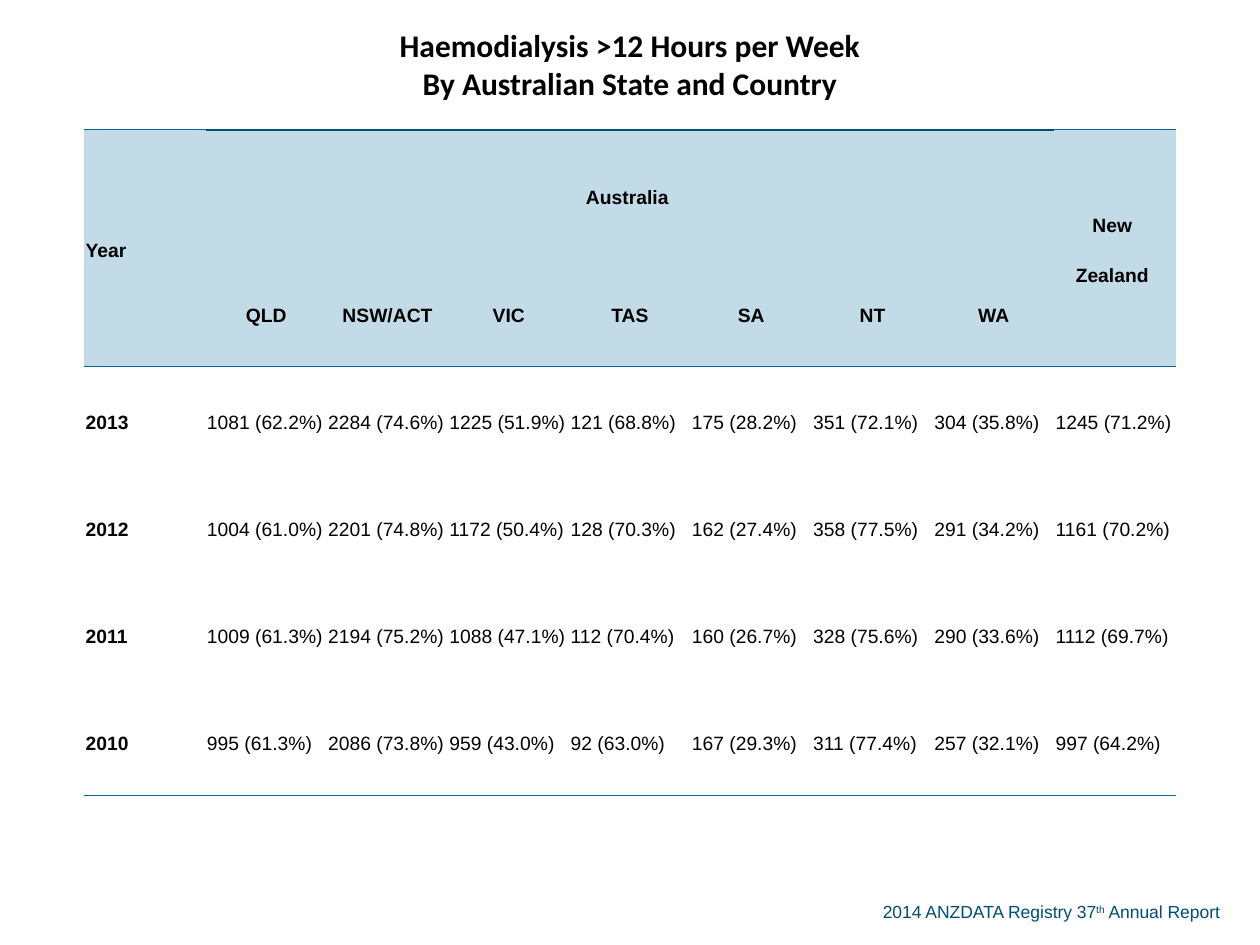
from lxml import etree
from pptx import Presentation
from pptx.dml.color import RGBColor
from pptx.enum.text import MSO_ANCHOR, MSO_AUTO_SIZE, PP_ALIGN
from pptx.oxml.ns import qn
from pptx.util import Inches, Pt

LEFT, CENTER, RIGHT = PP_ALIGN.LEFT, PP_ALIGN.CENTER, PP_ALIGN.RIGHT
MIDDLE = MSO_ANCHOR.MIDDLE
FIT_SHAPE = MSO_AUTO_SIZE.SHAPE_TO_FIT_TEXT
BLANK_LAYOUT = 6

COLORS = {"text": "000000", "header": "C2DBE7", "rule": "006699", "accent": "004D73"}

TITLE = ["Haemodialysis >12 Hours per Week", "By Australian State and Country"]
STATES = ["QLD", "NSW/ACT", "VIC", "TAS", "SA", "NT", "WA"]
HOURS = {
    "2013": ["1081 (62.2%)", "2284 (74.6%)", "1225 (51.9%)", "121 (68.8%)",
             "175 (28.2%)", "351 (72.1%)", "304 (35.8%)", "1245 (71.2%)"],
    "2012": ["1004 (61.0%)", "2201 (74.8%)", "1172 (50.4%)", "128 (70.3%)",
             "162 (27.4%)", "358 (77.5%)", "291 (34.2%)", "1161 (70.2%)"],
    "2011": ["1009 (61.3%)", "2194 (75.2%)", "1088 (47.1%)", "112 (70.4%)",
             "160 (26.7%)", "328 (75.6%)", "290 (33.6%)", "1112 (69.7%)"],
    "2010": ["995 (61.3%)", "2086 (73.8%)", "959 (43.0%)", "92 (63.0%)",
             "167 (29.3%)", "311 (77.4%)", "257 (32.1%)", "997 (64.2%)"],
}
ROW_HEIGHTS = [1.03, 1.03] + [0.85] * 5
FIRST_DATA_ROW = 3
LAST_COLUMN = len(STATES) + 1

TITLE_FONT = {"name": "Calibri", "size": Pt(18), "bold": True}
HEAD_FONT = {"name": "Arial", "size": Pt(11), "bold": True}
DATA_FONT = {**HEAD_FONT, "bold": False}
FOOTER_FONT = {"name": "Arial", "size": Pt(10)}
TITLE_PARA = {"alignment": CENTER}
DATA_PARA = {"alignment": LEFT, "line_spacing": 1.19, "space_after": Pt(14)}
HEAD_PARA = {**DATA_PARA, "alignment": CENTER}
CELL_FORMAT = {"vertical_anchor": MIDDLE, "margin_left": Inches(0.01),
               "margin_right": Inches(0.01), "margin_top": Inches(0.01),
               "margin_bottom": 0}


def set_all(target, values):
    for name, value in values.items():
        setattr(target, name, value)


def add_span(para, text, font, color):
    span = para.add_run()
    span.text = text
    set_all(span.font, font)
    span.font.color.rgb = RGBColor.from_string(COLORS[color])
    return span


def write_cell(cell, lines, para_format, font):
    for index, line in enumerate(lines):
        frame = cell.text_frame
        para = frame.add_paragraph() if index else frame.paragraphs[0]
        set_all(para, para_format)
        add_span(para, line, font, "text")


def rule_at(level, column):
    """Colour and points of the rule above the row numbered level."""
    if level == 1 and 0 < column < LAST_COLUMN:
        return "accent", 1
    if level in (1, FIRST_DATA_ROW, len(ROW_HEIGHTS)):
        return "rule", 0.5
    return None


def set_borders(cell, top, bottom):
    properties = cell._tc.get_or_add_tcPr()
    for tag, rule in (("a:lnL", None), ("a:lnR", None), ("a:lnT", top), ("a:lnB", bottom)):
        line = etree.SubElement(properties, qn(tag))
        if rule is None:
            etree.SubElement(line, qn("a:noFill"))
            continue
        color, points = rule
        line.set("w", str(Pt(points)))
        fill = etree.SubElement(line, qn("a:solidFill"))
        etree.SubElement(fill, qn("a:srgbClr"), val=COLORS[color])


def format_cells(table):
    for row in range(len(ROW_HEIGHTS)):
        for column in range(LAST_COLUMN + 1):
            cell = table.cell(row, column)
            set_all(cell, CELL_FORMAT)
            set_borders(cell, rule_at(row, column),
                        rule_at(row + cell.span_height, column))
            if 0 < row < FIRST_DATA_ROW:
                cell.fill.solid()
                cell.fill.fore_color.rgb = RGBColor.from_string(COLORS["header"])
            else:
                cell.fill.background()


def add_hours_table(page, left, top, width, height):
    frame = page.shapes.add_table(len(ROW_HEIGHTS), LAST_COLUMN + 1,
                                  left, top, width, height)
    table = frame.table
    table.first_row = table.horz_banding = False
    for row, row_height in zip(table.rows, ROW_HEIGHTS):
        row.height = Inches(row_height)

    # Merged title and header cells
    for first, last in (((0, 1), (0, LAST_COLUMN - 1)),
                        ((1, 0), (2, 0)),
                        ((1, 1), (1, LAST_COLUMN - 1)),
                        ((1, LAST_COLUMN), (2, LAST_COLUMN))):
        table.cell(*first).merge(table.cell(*last))
    format_cells(table)

    # Title and header text
    write_cell(table.cell(0, 1), TITLE, TITLE_PARA, TITLE_FONT)
    write_cell(table.cell(1, 0), ["Year"], DATA_PARA, HEAD_FONT)
    write_cell(table.cell(1, 1), ["Australia "], HEAD_PARA, HEAD_FONT)
    write_cell(table.cell(1, LAST_COLUMN), ["New ", "Zealand "], HEAD_PARA, HEAD_FONT)
    for column, state in enumerate(STATES, 1):
        write_cell(table.cell(2, column), [state], HEAD_PARA, HEAD_FONT)

    # Yearly figures
    for row, (year, figures) in enumerate(HOURS.items(), FIRST_DATA_ROW):
        write_cell(table.cell(row, 0), [year], DATA_PARA, HEAD_FONT)
        for column, figure in enumerate(figures, 1):
            write_cell(table.cell(row, column), [figure], DATA_PARA, DATA_FONT)


def add_footer(page, left, top, width, height):
    frame = page.shapes.add_textbox(left, top, width, height).text_frame
    set_all(frame, {"word_wrap": True, "auto_size": FIT_SHAPE})
    para = frame.paragraphs[0]
    para.alignment = RIGHT
    add_span(para, "2014 ANZDATA Registry 37", FOOTER_FONT, "accent")
    ordinal = add_span(para, "th", FOOTER_FONT, "accent")
    ordinal._r.get_or_add_rPr().set("baseline", "30000")
    add_span(para, " Annual Report", FOOTER_FONT, "accent")


def main():
    deck = Presentation()
    deck.slide_width, deck.slide_height = Inches(10), Inches(7.5)
    page = deck.slides.add_slide(deck.slide_layouts[BLANK_LAYOUT])
    add_footer(page, Inches(6.79), Inches(7.1), Inches(2.99), Inches(0.27))
    add_hours_table(page, Inches(0.67), 0, Inches(8.66), Inches(sum(ROW_HEIGHTS)))
    deck.save("out.pptx")


if __name__ == "__main__":
    main()
